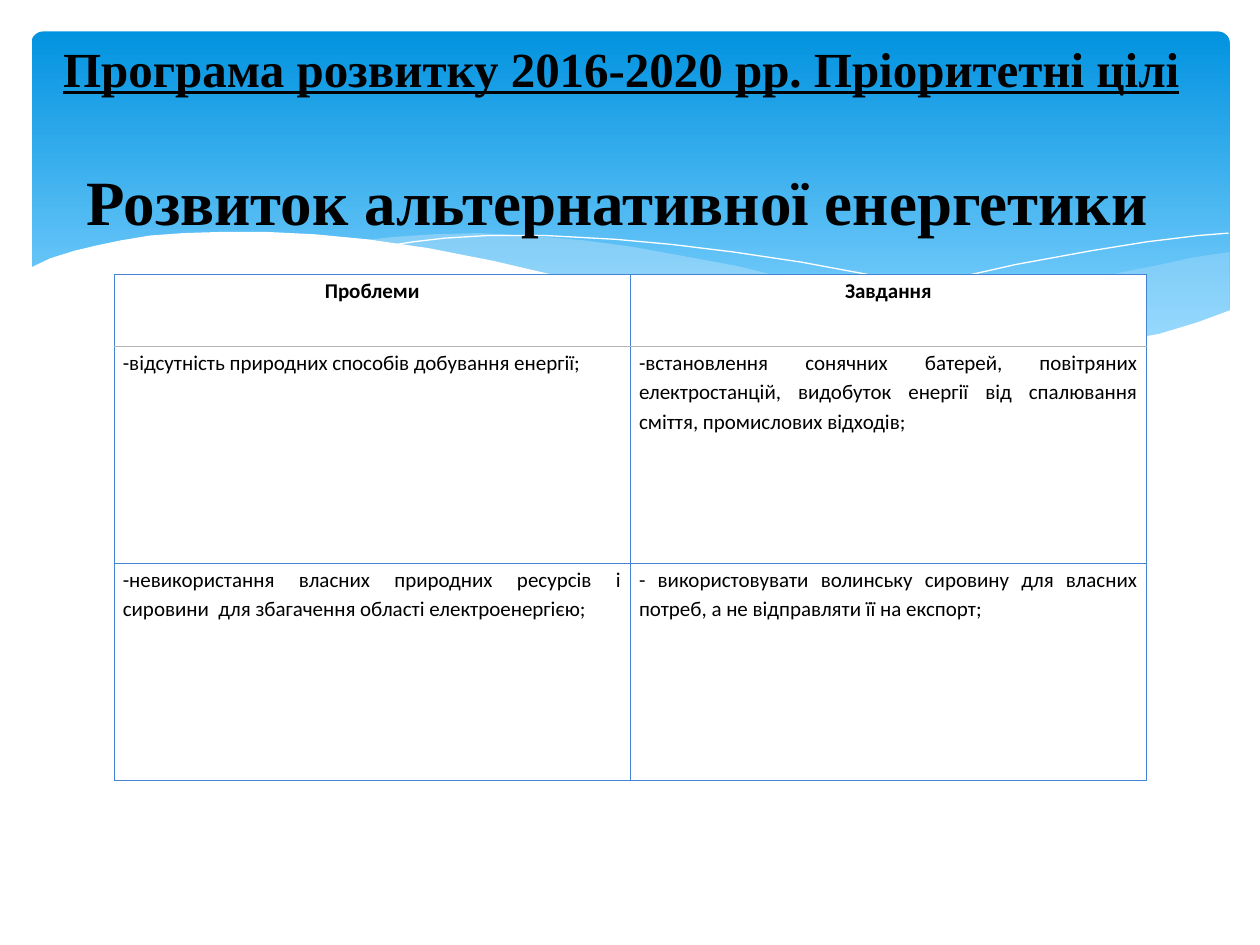
from lxml import etree
from pptx import Presentation
from pptx.dml.color import RGBColor
from pptx.enum.shapes import MSO_SHAPE
from pptx.enum.text import MSO_ANCHOR, PP_ALIGN
from pptx.oxml.ns import qn
from pptx.util import Pt

ROUND_RECT = MSO_SHAPE.ROUNDED_RECTANGLE
MIDDLE = MSO_ANCHOR.MIDDLE
LEFT, CENTER, JUSTIFY = PP_ALIGN.LEFT, PP_ALIGN.CENTER, PP_ALIGN.JUSTIFY

COLORS = {
    "sky_top": "0293E0",
    "sky_bottom": "83D3FE",
    "wave": "C6E7FC",
    "white": "FFFFFF",
    "text": "000000",
    "border": "4584D3",
    "header_rule": "B4B4B4",
}
RGB = {name: RGBColor.from_string(value) for name, value in COLORS.items()}


def add_run(p, text, font, size, bold, underline=False):
    r = p.add_run()
    r.text = text
    r.font.name = font
    r.font.size = Pt(size)
    r.font.bold = bold
    r.font.underline = underline
    r.font.color.rgb = RGB["text"]


def set_border(tc_pr, index, side, color, width):
    ln = etree.Element(qn("a:" + side), w=str(Pt(width)))
    fill = etree.SubElement(ln, qn("a:solidFill"))
    etree.SubElement(fill, qn("a:srgbClr"), val=COLORS[color])
    tc_pr.insert(index, ln)


prs = Presentation()
prs.slide_width, prs.slide_height = Pt(720), Pt(540)
s = prs.slides.add_slide(prs.slide_layouts[6])

sp = s.shapes.add_shape(ROUND_RECT, Pt(18), Pt(18), Pt(684.7), Pt(194.4))
sp.shadow.inherit = False
sp.adjustments[0] = 0.034
sp.line.fill.background()
sp.fill.gradient()
sp.fill.gradient_angle = 270
for stop, position, color in zip(sp.fill.gradient_stops, (0, 0.9), ("sky_top", "sky_bottom")):
    stop.position = position
    stop.color.rgb = RGB[color]

right_wave = [
    (702.7, 144), (682.6, 146.9), (663.1, 151.2), (641.5, 155.5), (619.9, 160.6),
    (579.6, 170.6), (542.2, 178.6), (508.3, 185), (475.9, 190.8), (497.5, 193.7),
    (517.7, 195.8), (545, 198.7), (578.2, 200.2), (614.9, 198.7), (640.1, 195.8),
    (663.1, 190.8), (683.3, 185), (702.7, 177.8),
]
middle_wave = [
    (643, 196.6), (602.6, 190.8), (558, 182.9), (508.3, 172.8), (452.9, 159.8),
    (420.5, 151.9), (389.5, 146.2), (361.4, 141.1), (334.8, 137.5), (302.4, 134.6),
    (273.6, 133.2), (247.7, 133.9), (225.4, 135.4), (205.9, 137.5), (246.2, 143.3),
    (290.9, 151.9), (323.3, 159.8), (381.6, 172.8), (432.7, 183.6), (478.8, 191.5),
    (519.8, 197.3), (556.6, 199.4), (589, 200.2), (617, 199.4),
]
falling_line = [
    (222.5, 140.4), (236.2, 138.2), (254.2, 136.1), (278.6, 134.6), (311.8, 134.6),
    (352.1, 136.8), (383.8, 139.7), (419, 144), (457.9, 149.8), (500.4, 157.7),
    (547.2, 167.8), (598.3, 180.7), (653, 195.8),
]
rising_line = [
    (441.4, 185), (470.2, 177.1), (500.4, 169.2), (538.6, 160.6), (580.3, 151.2),
    (623.5, 143.3), (655.2, 138.2), (684.7, 134.6), (702, 133.2),
]
white_wave = [
    (703.4, 177.1), (684, 184.3), (662.4, 190.8), (638.6, 195.1), (612, 198),
    (582.5, 199.4), (547.9, 198), (509.8, 194.4), (466.6, 188.6), (416.9, 180),
    (362.2, 167.8), (321.8, 158.4), (281.5, 149), (244.8, 141.8), (210.2, 136.8),
    (180, 133.9), (151.9, 132.5), (127.4, 132.5), (105.1, 133.2), (85.7, 134.6),
    (68.4, 137.5), (54.7, 140.4), (42.5, 143.3), (28.8, 147.6), (16.6, 153.4),
    (16.6, 236.9), (703.4, 236.9),
]
waves = [
    (right_wave, "wave", 29),
    (middle_wave, "wave", 40),
    (falling_line, None, None),
    (rising_line, None, None),
    (white_wave, "white", 100),
]
for points, color, opacity in waves:
    points = [(Pt(x), Pt(y)) for x, y in points]
    builder = s.shapes.build_freeform(*points[0])
    builder.add_line_segments(points[1:], close=color is not None)
    sp = builder.convert_to_shape()
    sp.shadow.inherit = False
    if color:
        sp.line.fill.background()
        sp.fill.solid()
        sp.fill.fore_color.rgb = RGB[color]
        clr = sp.fill._xPr.find(".//" + qn("a:srgbClr"))
        etree.SubElement(clr, qn("a:alpha"), val=str(opacity * 1000))
    else:
        sp.fill.background()
        sp.line.color.rgb = RGB["white"]
        sp.line.width = Pt(0)

headings = [
    ("Програма розвитку 2016-2020 рр. Пріоритетні цілі", (20.2, -19.4, 669.6, 115.9), 28, CENTER, True),
    ("Розвиток альтернативної енергетики", (42.5, 88.6, 657.4, 51.1), 36, LEFT, False),
]
for text, box, size, align, underline in headings:
    tf = s.shapes.add_textbox(*map(Pt, box)).text_frame
    tf.word_wrap = True
    tf.vertical_anchor = MIDDLE
    p = tf.paragraphs[0]
    p.alignment = align
    add_run(p, text, "Times New Roman", size, True, underline)

rows = [
    ("Проблеми", "Завдання"),
    ("-відсутність природних способів добування енергії;",
     "-встановлення сонячних батерей, повітряних електростанцій, видобуток енергії від спалювання сміття, промислових відходів;"),
    ("-невикористання власних природних ресурсів і сировини  для збагачення області електроенергією;",
     "- використовувати волинську сировину для власних потреб, а не відправляти її на експорт;"),
]
heights = [41, 124, 124]
table = s.shapes.add_table(3, 2, Pt(65.2), Pt(157), Pt(590), Pt(sum(heights))).table
table.first_row = table.horz_banding = False
for col in table.columns:
    col.width = Pt(295)
for i, (texts, height) in enumerate(zip(rows, heights)):
    table.rows[i].height = Pt(height)
    for j, text in enumerate(texts):
        cell = table.cell(i, j)
        cell.margin_left = cell.margin_right = Pt(5)
        cell.margin_top = cell.margin_bottom = Pt(0)
        cell.fill.solid()
        cell.fill.fore_color.rgb = RGB["white"]
        p = cell.text_frame.paragraphs[0]
        p.alignment = JUSTIFY if i else CENTER
        p.line_spacing = 1.15
        add_run(p, text, "Calibri", 12, i == 0)
        tc_pr = cell._tc.get_or_add_tcPr()
        for k, side in enumerate(("lnL", "lnR", "lnT", "lnB")):
            under_header = (i, side) in ((0, "lnB"), (1, "lnT"))
            color, width = ("header_rule", 1.25) if under_header else ("border", 0.75)
            set_border(tc_pr, k, side, color, width)

prs.save("out.pptx")
